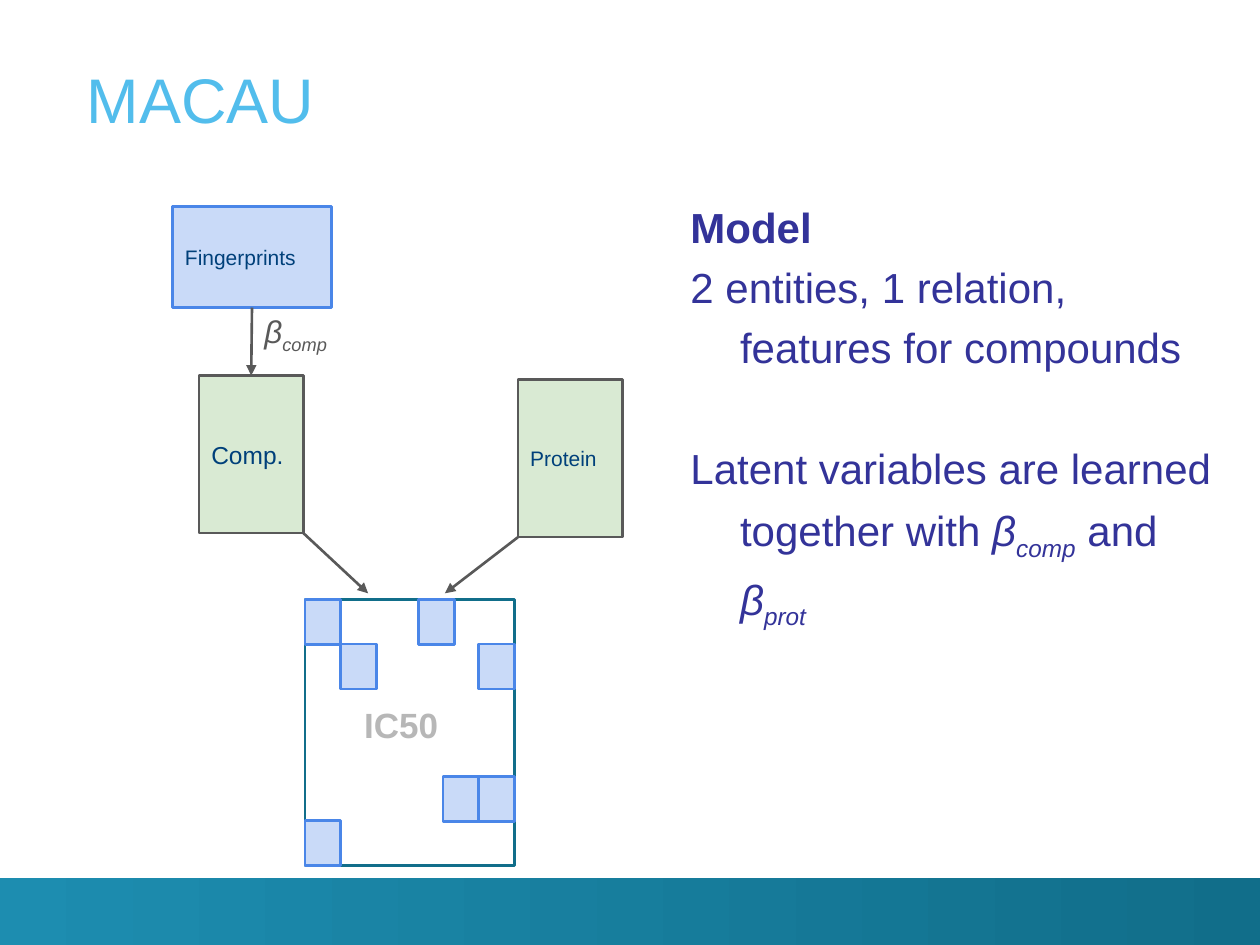
from dataclasses import dataclass

from lxml import etree
from pptx import Presentation
from pptx import util as u
from pptx.dml.color import RGBColor
from pptx.enum import shapes, text
from pptx.oxml import ns


@dataclass(frozen=True)
class Theme:
    font: str = "Arial"
    title: str = "52BDEC"
    body: str = "333399"
    label: str = "00407A"
    gray: str = "595959"
    pale: str = "B7B7B7"
    blue: str = "C9DAF8"
    edge: str = "4A86E8"
    green: str = "D9EAD3"
    teal: str = "116E8A"
    sea: str = "1D8DB0"
    big: int = 36
    main: int = 24
    mid: int = 20
    beta: int = 18
    small: int = 14
    tiny: int = 12
    line: float = 1.5


T = Theme()


def rgb(code):
    return RGBColor.from_string(code)


def write(shape, paras, size, color, anchor="TOP", lead=None, hang=0, gaps=()):
    frame = shape.text_frame
    frame.word_wrap = True
    frame.auto_size = text.MSO_AUTO_SIZE.NONE
    frame.vertical_anchor = text.MSO_ANCHOR[anchor]
    frame.margin_left = frame.margin_right = u.Cm(0.25)
    frame.margin_top = frame.margin_bottom = u.Cm(0.25)
    for n, runs in enumerate(paras):
        para = frame.add_paragraph() if n else frame.paragraphs[0]
        para.alignment = text.PP_ALIGN.LEFT
        para.space_before = u.Pt(dict(gaps).get(n, 0))
        para.space_after = u.Pt(0)
        if lead:
            para.line_spacing = lead
        if hang:
            props = para._p.get_or_add_pPr()
            props.set("marL", str(u.Cm(hang)))
            props.set("indent", str(-u.Cm(hang)))
            etree.SubElement(props, ns.qn("a:buNone"))
        for words, style in runs:
            run = para.add_run()
            run.text = words
            font = run.font
            font.name, font.size = T.font, u.Pt(size)
            font.bold, font.italic = "b" in style, "i" in style
            font.color.rgb = rgb(color)
            if "s" in style:
                run._r.get_or_add_rPr().set("baseline", "-25000")


def beta(sub):
    return [("β", "i"), (sub, "is")]


def rect(slide, x, y, w, h, fill=None, line=None):
    shape = slide.shapes.add_shape(
        shapes.MSO_SHAPE.RECTANGLE, u.Cm(x), u.Cm(y), u.Cm(w), u.Cm(h))
    shape.shadow.inherit = False
    if fill:
        shape.fill.solid()
        shape.fill.fore_color.rgb = rgb(fill)
    else:
        shape.fill.background()
    if line:
        shape.line.color.rgb = rgb(line)
        shape.line.width = u.Pt(T.line)
    else:
        shape.line.fill.background()
    return shape


def label(slide, x, y, w, h):
    return slide.shapes.add_textbox(u.Cm(x), u.Cm(y), u.Cm(w), u.Cm(h))


def arrow(slide, x1, y1, x2, y2):
    link = slide.shapes.add_connector(
        shapes.MSO_CONNECTOR.STRAIGHT, u.Cm(x1), u.Cm(y1), u.Cm(x2), u.Cm(y2))
    link.line.color.rgb = rgb(T.gray)
    link.line.width = u.Pt(T.line)
    tail = etree.SubElement(link.line._get_or_add_ln(), ns.qn("a:tailEnd"))
    tail.set("type", "triangle")
    etree.SubElement(link._element.spPr, ns.qn("a:effectLst"))


def footer(slide, x, y, w, h):
    bar = rect(slide, x, y, w, h)
    bar.fill.gradient()
    bar.fill.gradient_angle = 0
    for stop, color in zip(bar.fill.gradient_stops, (T.sea, T.teal)):
        stop.color.rgb = rgb(color)


def header(slide, x, y, w, h):
    title = slide.shapes.title
    title.left, title.top = u.Cm(x), u.Cm(y)
    title.width, title.height = u.Cm(w), u.Cm(h)
    write(title, [[("MACAU", "")]], T.big, T.title, anchor="BOTTOM")


def notes(slide, x, y, w, h):
    paras = [
        [("Model", "b")],
        [("2 entities, 1 relation, features for compounds", "")],
        [("Latent variables are learned together with ", ""),
         *beta("comp"), (" and ", ""), *beta("prot")],
    ]
    write(label(slide, x, y, w, h), paras, T.main, T.body,
          lead=1.2, hang=1, gaps={2: 34.5})


def matrix(slide, x, y, w, h):
    rect(slide, x, y, w, h, line=T.teal)
    wide, high = 0.72, 0.91
    right, step = w - wide, (h - high) / 5
    cells = [(0, 0), (wide, 1), (right, 1), (2.29, 0), (0, 5),
             (right, 4), (right - wide, 4)]
    for left, row in cells:
        rect(slide, x + left, y + row * step, wide, high, T.blue, T.edge)
    write(label(slide, x + 0.94, y + 1.85, 2.34, 2.03),
          [[("IC50", "b")]], T.mid, T.pale)


def model(slide, x, y):
    wide, high = 2.11, 3.18
    comp, prot = (x + 0.53, y + 3.4), (x + 6.96, y + 3.48)
    grid = y + 7.92
    matrix(slide, x + 2.67, grid, 4.22, 5.36)
    nodes = [
        ("Fingerprints", (x, y), 3.2, 2.03, T.blue, T.edge, T.tiny),
        ("Comp.", comp, wide, high, T.green, T.gray, T.small),
        ("Protein", prot, wide, high, T.green, T.gray, T.tiny),
    ]
    for name, spot, w, h, fill, line, size in nodes:
        write(rect(slide, *spot, w, h, fill, line), [[(name, "")]],
              size, T.label, anchor="MIDDLE")
    arrow(slide, x + 1.6, y + 2.03, comp[0] + wide / 2, comp[1])
    arrow(slide, comp[0] + wide, comp[1] + high, x + 3.94, grid - 0.13)
    arrow(slide, prot[0], prot[1] + high, x + 5.49, grid - 0.13)
    write(label(slide, x + 1.6, y + 1.88, 2.34, 1.12),
          [beta("comp")], T.beta, T.gray)


def main():
    deck = Presentation()
    deck.slide_width, deck.slide_height = u.Cm(25.4), u.Cm(19.05)
    slide = deck.slides.add_slide(deck.slide_layouts[5])
    footer(slide, 0, 17.7, 25.4, 1.35)
    header(slide, 1.5, 0.5, 23.14, 2.5)
    notes(slide, 13.67, 3.6, 11, 14.45)
    model(slide, 3.48, 4.17)
    deck.save("out.pptx")


if __name__ == "__main__":
    main()
